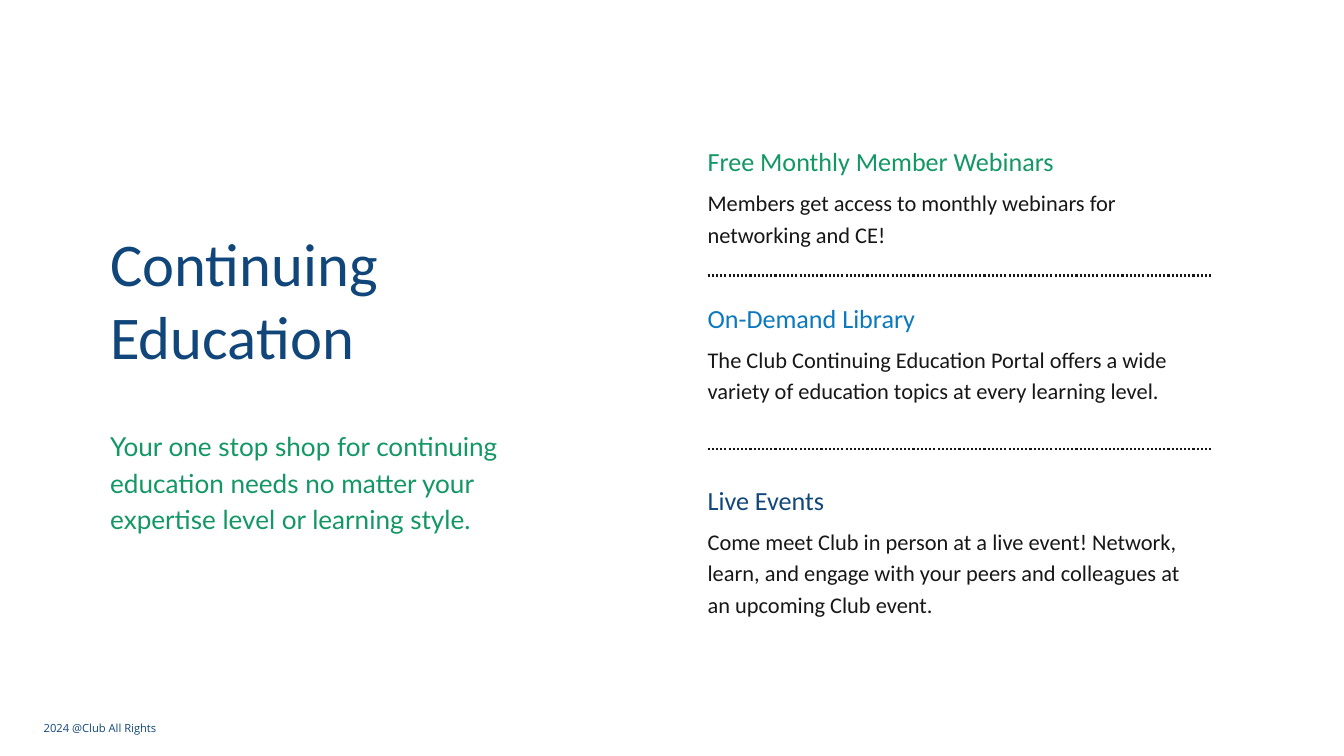
import pptx
import pptx.util
import pptx.dml.color
import pptx.enum.dml
import pptx.enum.shapes
import pptx.enum.text
import pptx.oxml.ns
import lxml.etree

PX = 9144
LEFT, WIDE = 1053, 727

HUES = {
    "white": "FFFFFF",
    "ink": "171717",
    "green": "139765",
    "blue": "0C79BE",
    "navy": "11467A",
}

STYLES = {
    "title": {"name": "Calibri", "size": 65, "lead": 78},
    "lead": {"name": "Lato", "size": 28, "lead": 39.2},
    "head": {"name": "Calibri", "size": 28, "lead": 39.2},
    "body": {"name": "Calibri", "size": 24, "lead": 33.6},
    "foot": {"name": "Open Sans", "size": 12, "lead": 16.8},
}

TOPICS = [
    (209, 91, "green", "Free Monthly Member Webinars",
     "Members get access to monthly webinars for networking and CE!"),
    (442, 139, "blue", "On-Demand Library",
     "The Club Continuing Education Portal offers a wide variety of "
     "education topics at every learning level."),
    (713, 139, "navy", "Live Events",
     "Come meet Club in person at a live event! Network, learn, and engage "
     "with your peers and colleagues at an upcoming Club event."),
]


def px(num):
    return pptx.util.Emu(num * PX)


def hue(key):
    return pptx.dml.color.RGBColor.from_string(HUES[key])


def put(item, vals):
    for key, val in vals.items():
        setattr(item, key, val)


def add_text(home, box, words, style, tint, align="LEFT"):
    look = STYLES[style]
    frame = home.add_textbox(*map(px, box)).text_frame
    put(frame, {
        "word_wrap": True,
        "auto_size": pptx.enum.text.MSO_AUTO_SIZE.SHAPE_TO_FIT_TEXT,
        "margin_left": 0,
        "margin_top": 0,
        "margin_right": 0,
        "margin_bottom": 0,
    })
    para = frame.paragraphs[0]
    put(para, {
        "alignment": getattr(pptx.enum.text.PP_ALIGN, align),
        "line_spacing": pptx.util.Pt(look["lead"]),
    })
    run = para.add_run()
    run.text = words
    put(run.font, {"name": look["name"], "size": pptx.util.Pt(look["size"])})
    run.font.color.rgb = hue(tint)


def add_rule(home, top):
    rule = home.add_connector(
        pptx.enum.shapes.MSO_CONNECTOR.STRAIGHT,
        px(LEFT), px(top), px(1802), px(top))
    rule.line.color.rgb = hue("ink")
    put(rule.line, {
        "width": pptx.util.Pt(2.25),
        "dash_style": pptx.enum.dml.MSO_LINE.ROUND_DOT,
    })
    props = rule.element.find(pptx.oxml.ns.qn("p:spPr"))
    lxml.etree.SubElement(props, pptx.oxml.ns.qn("a:effectLst"))


def add_topic(home, top, high, tint, head, body):
    group = home.add_group_shape().shapes
    add_text(group, (LEFT, top, WIDE, 51), head, "head", tint)
    add_text(group, (LEFT, top + 66, WIDE, high), body, "body", "ink")


def add_intro(home):
    group = home.add_group_shape().shapes
    add_text(group, (164, 336, 735, 219), "Continuing Education",
             "title", "navy")
    add_text(group, (164, 633, 632, 160),
             "Your one stop shop for continuing education needs no matter "
             "your expertise level or learning style.", "lead", "green")


def main():
    deck = pptx.Presentation()
    put(deck, {"slide_width": px(2000), "slide_height": px(1125)})
    slide = deck.slides.add_slide(deck.slide_layouts[6])
    fill = slide.background.fill
    fill.solid()
    fill.fore_color.rgb = hue("white")
    home = slide.shapes
    add_intro(home)
    for topic in TOPICS:
        add_topic(home, *topic)
    for top in (410, 668):
        add_rule(home, top)
    add_text(home, (56, 1070, 186, 22), "2024 @Club All Rights",
             "foot", "navy", "CENTER")
    deck.save("out.pptx")


if __name__ == "__main__":
    main()
